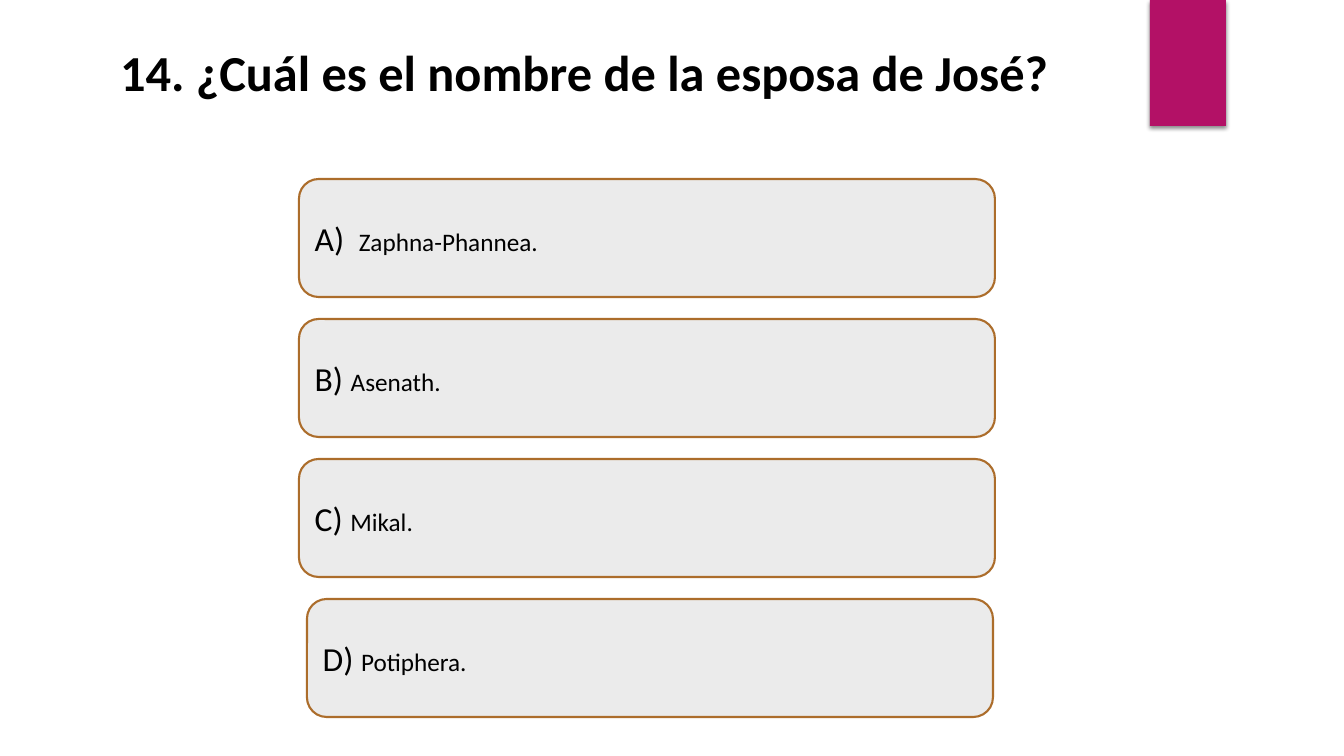
import pptx
import pptx.dml.color
import pptx.enum.shapes
import pptx.enum.text
import pptx.util
from lxml import etree
from pptx.oxml.ns import qn

EMU_PER_PX = 914400 / 100.8
BODY_FONT = "Calibri"
ANSWERS = [
    [("A) ", 24, BODY_FONT, "000000"), (" ", 18, "TeX Gyre Adventor", "FFFFFF"),
     ("Zaphna-Phannea.", 18, BODY_FONT, "000000")],
    [("B) ", 24, BODY_FONT, "000000"), ("Asenath.", 18, BODY_FONT, "000000")],
    [("C) ", 24, BODY_FONT, "000000"), ("Mikal.", 18, BODY_FONT, "000000")],
    [("D) ", 24, BODY_FONT, "000000"), ("Potiphera.", 18, BODY_FONT, "000000")],
]
ANSWER_SPANS = [(299, 696)] * 3 + [(307, 686)]
FIRST_TOP, ANSWER_HEIGHT, ANSWER_PITCH = 179, 118, 140


def px(length):
    """Turn pixels into EMU."""
    return pptx.util.Emu(round(length * EMU_PER_PX))


def color(value):
    """Turn a hex string into a colour."""
    return pptx.dml.color.RGBColor.from_string(value)


def format_run(run, size, font_name, value, bold=False):
    """Set the font of one run."""
    run.font.size = pptx.util.Pt(size)
    run.font.name = font_name
    run.font.color.rgb = color(value)
    run.font.bold = bold


def add_box(slide, kind, left, top, width, height, fill):
    """Add a filled preset shape without line or shadow."""
    shape = slide.shapes.add_shape(kind, px(left), px(top), px(width), px(height))
    shape.shadow.inherit = False
    shape.fill.solid()
    shape.fill.fore_color.rgb = color(fill)
    shape.line.fill.background()
    return shape


def add_corner_tab(slide):
    """Add the magenta tab with its soft shadow."""
    shape = add_box(slide, pptx.enum.shapes.MSO_SHAPE.RECTANGLE, 1150, 0, 76, 126, "B31166")
    effects = shape._element.spPr.find(qn("a:effectLst"))
    shadow = etree.SubElement(effects, qn("a:outerShdw"), blurRad="38100", dist="25400",
                              dir="5400000", rotWithShape="0")
    shade = etree.SubElement(shadow, qn("a:srgbClr"), val="000000")
    etree.SubElement(shade, qn("a:alpha"), val="45000")


def set_title(slide, text):
    """Place and format the question."""
    title = slide.shapes.title
    title.left, title.top, title.width, title.height = px(54), px(36), px(1061), px(132)
    frame = title.text_frame
    frame.text = text
    frame.auto_size = pptx.enum.text.MSO_AUTO_SIZE.NONE
    frame.vertical_anchor = pptx.enum.text.MSO_ANCHOR.TOP
    paragraph = frame.paragraphs[0]
    paragraph.alignment = pptx.enum.text.PP_ALIGN.CENTER
    format_run(paragraph.runs[0], 36, BODY_FONT, "000000", bold=True)


def add_answer(slide, left, top, width, pieces):
    """Add one rounded answer box."""
    shape = add_box(slide, pptx.enum.shapes.MSO_SHAPE.ROUNDED_RECTANGLE,
                    left, top, width, ANSWER_HEIGHT, "EBEBEB")
    shape.line.color.rgb = color("AC6D2B")
    shape.line.width = pptx.util.Pt(1.5)
    shape.text_frame.word_wrap = True
    shape.text_frame.vertical_anchor = pptx.enum.text.MSO_ANCHOR.MIDDLE
    paragraph = shape.text_frame.paragraphs[0]
    paragraph.alignment = pptx.enum.text.PP_ALIGN.LEFT
    for text, size, font_name, value in pieces:
        run = paragraph.add_run()
        run.text = text
        format_run(run, size, font_name, value)


def main():
    """Build and save the quiz slide."""
    presentation = pptx.Presentation()
    presentation.slide_width, presentation.slide_height = px(1344), px(756)
    slide = presentation.slides.add_slide(presentation.slide_layouts[5])
    add_corner_tab(slide)
    set_title(slide, "14. ¿Cuál es el nombre de la esposa de José?")
    for index, (pieces, (left, width)) in enumerate(zip(ANSWERS, ANSWER_SPANS)):
        add_answer(slide, left, FIRST_TOP + index * ANSWER_PITCH, width, pieces)
    presentation.save("out.pptx")


if __name__ == "__main__":
    main()
